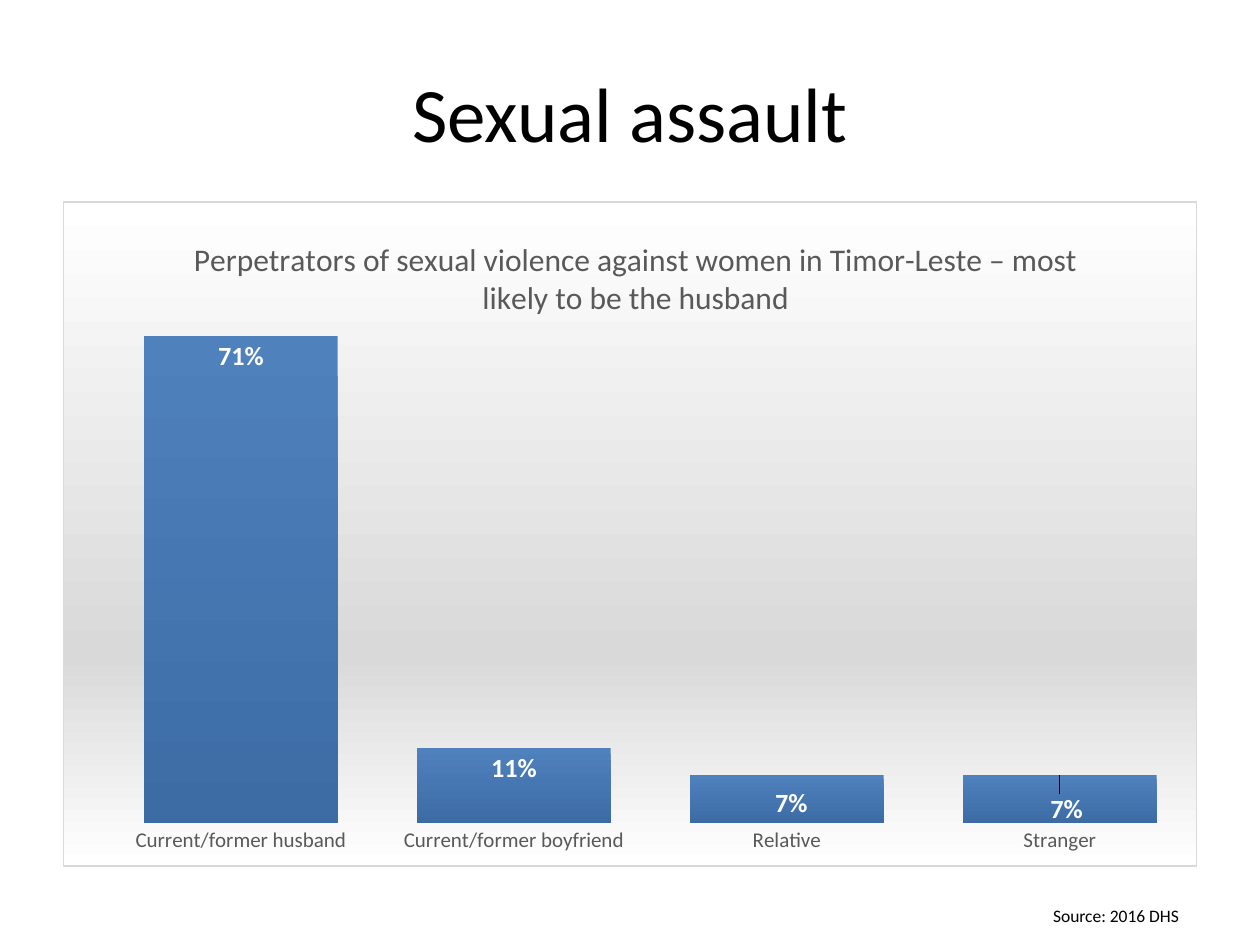
from pptx import Presentation
from pptx.chart.data import CategoryChartData
from pptx.dml.color import RGBColor
from pptx.enum.chart import XL_CHART_TYPE as ChartType, XL_LABEL_POSITION as LabelPos
from pptx.enum.chart import XL_TICK_MARK as Tick
from pptx.enum.text import MSO_ANCHOR as Anchor, PP_ALIGN as Align
from pptx.oxml import parse_xml
from pptx.oxml.ns import nsdecls, qn
from pptx.util import Cm, Pt

PERPETRATORS = {
    "Current/former husband": 0.71,
    "Current/former boyfriend": 0.11,
    "Relative": 0.07,
    "Stranger": 0.07,
}
LABEL_SHIFTS = {2: (0.004, 0.012), 3: (0.006, 0.02)}
LABEL_FORMAT = {"size": Pt(15), "bold": True, "name": "Calibri"}
PERCENT = "0%"


def set_color(color, hex_code):
    """Set a colour object from a hex string."""
    color.rgb = RGBColor.from_string(hex_code)


def set_format(target, values):
    """Set each attribute in values on the target."""
    for name, value in values.items():
        setattr(target, name, value)


def style_font(font, hex_code, values):
    """Apply format values and a colour to a font."""
    set_format(font, values)
    set_color(font.fill_color if hasattr(font, "fill_color") else font.color, hex_code)


def gradient_xml(stops):
    """Return a top-to-bottom gradient fill for (percent, hex) stops."""
    marks = "".join(
        f'<a:gs pos="{percent * 1000}"><a:srgbClr val="{code}"/></a:gs>'
        for percent, code in stops
    )
    return (f'<a:gradFill {nsdecls("a")} rotWithShape="1"><a:gsLst>{marks}</a:gsLst>'
            '<a:lin ang="5400000" scaled="0"/></a:gradFill>')


def set_layout(parent, index, **places):
    """Give a chart part a manual layout, as fractions of the chart."""
    for old in parent.findall(qn("c:layout")):
        parent.remove(old)
    marks = "".join(f'<c:{name} val="{value}"/>' for name, value in places.items())
    parent.insert(index, parse_xml(
        f'<c:layout {nsdecls("c")}><c:manualLayout>{marks}</c:manualLayout></c:layout>'))


def fill_chart_area(chart):
    """Give the chart area its gradient and thin border."""
    gradient = gradient_xml([(0, "FFFFFF"), (68, "D9D9D9"), (100, "FFFFFF")])
    area = parse_xml(
        f'<c:spPr {nsdecls("c", "a")}>{gradient}<a:ln w="9525"><a:solidFill>'
        '<a:srgbClr val="D9D9D9"/></a:solidFill></a:ln></c:spPr>')
    chart._chartSpace.find(qn("c:chart")).addnext(area)


def style_axes(chart):
    """Show only the category names and fix the value scale."""
    categories, values = chart.category_axis, chart.value_axis
    set_format(categories, {"major_tick_mark": Tick.NONE, "minor_tick_mark": Tick.NONE,
                            "has_major_gridlines": False})
    categories.format.line.fill.background()
    style_font(categories.tick_labels.font, "595959", {"size": Pt(12), "name": "Calibri"})
    set_format(values, {"minimum_scale": 0, "maximum_scale": 0.8,
                        "has_major_gridlines": False, "visible": False})
    set_format(values.tick_labels, {"number_format": PERCENT,
                                    "number_format_is_linked": False})


def style_bars(plot):
    """Fill the bars and place their value labels."""
    set_format(plot, {"gap_width": 41, "vary_by_categories": False})
    bars = plot.series[0]
    bars.invert_if_negative = False
    bars._element.get_or_add_spPr().append(
        parse_xml(gradient_xml([(0, "4F81BD"), (100, "3D6CA4")])))
    labels = bars.data_labels
    set_format(labels, {"show_value": True, "position": LabelPos.INSIDE_END,
                        "number_format": PERCENT, "number_format_is_linked": False})
    style_font(labels.font, "FFFFFF", LABEL_FORMAT)
    for index, (dx, dy) in LABEL_SHIFTS.items():
        label = bars.points[index].data_label
        style_font(label.font, "FFFFFF", LABEL_FORMAT)
        label.position = LabelPos.INSIDE_END
        element = label._get_or_add_dLbl()
        set_layout(element, 1, x=dx, y=dy)
        element.insert(2, parse_xml(
            f'<c:numFmt {nsdecls("c")} formatCode="{PERCENT}" sourceLinked="0"/>'))


def add_perpetrator_chart(slide, left, top, width, height):
    """Add the column chart of perpetrators in the given box."""
    data = CategoryChartData(number_format=PERCENT)
    data.categories = list(PERPETRATORS)
    data.add_series("Series 1", list(PERPETRATORS.values()))
    chart = slide.shapes.add_chart(
        ChartType.COLUMN_CLUSTERED, left, top, width, height, data).chart
    chart.has_legend = False
    style_font(chart.font, "000000", {"size": Pt(15), "name": "Calibri"})
    heading = chart.chart_title
    heading.text_frame.text = ("Perpetrators of sexual violence against women in "
                               "Timor-Leste – most likely to be the husband")
    style_font(heading.text_frame.paragraphs[0].runs[0].font, "595959",
               {"size": Pt(18), "bold": False, "name": "Calibri"})
    set_layout(heading._element, 1, xMode="edge", yMode="edge", x=0.11, y=0.045)
    set_layout(chart._chartSpace.chart.plotArea, 0, layoutTarget="inner", xMode="edge",
               yMode="edge", x=0.036, y=0.108, w=0.964, h=0.828)
    style_axes(chart)
    style_bars(chart.plots[0])
    fill_chart_area(chart)


def place_title(slide, left, top, width, height):
    """Fill the title placeholder and move it to the given box."""
    title = slide.shapes.title
    set_format(title, {"left": left, "top": top, "width": width, "height": height})
    title.text_frame.text = "Sexual assault"
    title.text_frame.vertical_anchor = Anchor.MIDDLE
    line = title.text_frame.paragraphs[0]
    line.alignment = Align.CENTER
    style_font(line.runs[0].font, "000000", {"size": Pt(44), "name": "Calibri"})


def add_source(slide, left, top, width, height):
    """Add the source note in the given box."""
    frame = slide.shapes.add_textbox(left, top, width, height).text_frame
    frame.word_wrap = False
    frame.text = "Source: 2016 DHS"
    style_font(frame.paragraphs[0].runs[0].font, "000000",
               {"size": Pt(10), "name": "Calibri"})


def main():
    """Build and save the slide."""
    deck = Presentation()
    set_format(deck, {"slide_width": Cm(25.4), "slide_height": Cm(19.05)})
    slide = deck.slides.add_slide(deck.slide_layouts[5])
    margin, width = Cm(1.27), Cm(22.86)
    place_title(slide, margin, Cm(0.76), width, Cm(3))
    add_perpetrator_chart(slide, margin, Cm(4.06), width, Cm(13.41))
    add_source(slide, Cm(20.98), Cm(18.11), Cm(3.15), Cm(0.69))
    deck.save("out.pptx")


if __name__ == "__main__":
    main()
